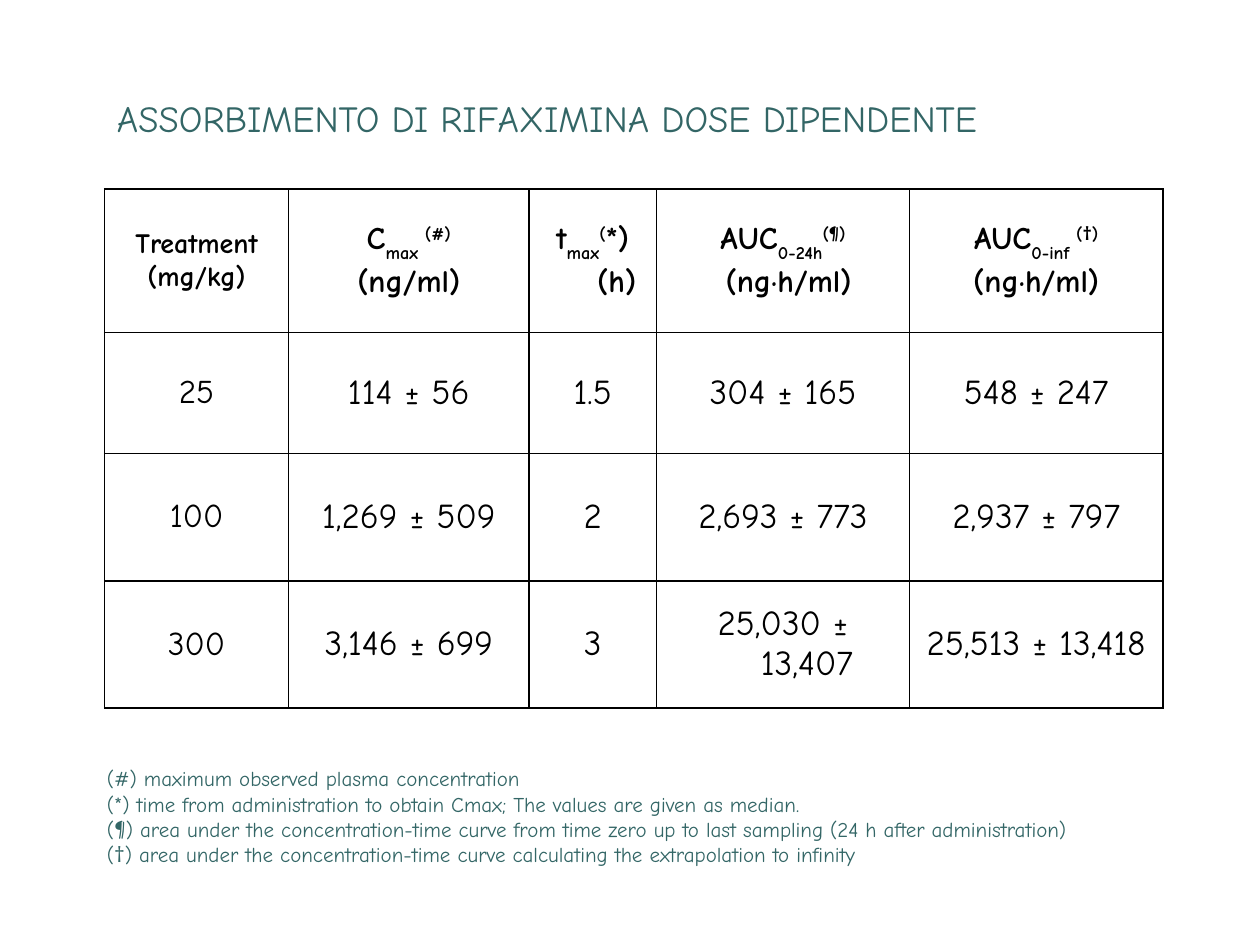
from dataclasses import dataclass

from lxml import etree
from pptx import Presentation
from pptx.dml.color import RGBColor
from pptx.enum.text import MSO_ANCHOR, PP_ALIGN
from pptx.oxml.ns import qn
from pptx.util import Inches, Pt

CENTER = PP_ALIGN.CENTER
MIDDLE = MSO_ANCHOR.MIDDLE
BOTTOM = MSO_ANCHOR.BOTTOM
TOP = MSO_ANCHOR.TOP
BLANK_LAYOUT = 6
SUBSCRIPT, SUPERSCRIPT = -30000, 30000


@dataclass(frozen=True)
class Theme:
    font: str = "Comic Neue"
    accent: RGBColor = RGBColor(0x33, 0x66, 0x66)
    ink: RGBColor = RGBColor(0, 0, 0)
    paper: RGBColor = RGBColor(255, 255, 255)
    title: int = 21
    treatment: int = 16
    header: int = 18
    dose: int = 19
    value: int = 20
    note: int = 12
    border: int = 1


THEME = Theme()
TITLE = "ASSORBIMENTO DI RIFAXIMINA DOSE DIPENDENTE"
COLUMN_WIDTHS = (1.46, 1.91, 1.01, 2.01, 2.01)
ROW_HEIGHTS = (1.14, 0.96, 1.01, 1.01)
HANGING_INDENT = 0.38
HEADERS = (
    (("Treatment",), ("(mg/kg)",)),
    (("C", ("max ", SUBSCRIPT), ("(#)", SUPERSCRIPT)), ("(ng/ml)",)),
    (("t", ("max", SUBSCRIPT), ("(", SUPERSCRIPT), "*) (h)"),),
    (("AUC", ("0-24h", SUBSCRIPT), ("(¶)", SUPERSCRIPT)), (" (ng·h/ml)",)),
    (("AUC", ("0-inf ", SUBSCRIPT), ("(†)", SUPERSCRIPT)), ("(ng·h/ml)",)),
)
RESULTS = (
    ("25", "114 ± 56", "1.5", "304 ± 165", "548 ± 247"),
    ("100", "1,269 ± 509", "2", "2,693 ± 773", "2,937 ± 797"),
    ("300", "3,146 ± 699", "3", "25,030 ± 13,407", "25,513 ± 13,418"),
)
NOTES = (
    "(#) maximum observed plasma concentration",
    "(*) time from administration to obtain Cmax; The values are given as median.",
    "(¶) area under the concentration-time curve from time zero up to last sampling (24 h after administration)",
    "(†) area under the concentration-time curve calculating the extrapolation to infinity",
)


def add_span(para, content, size, color, bold=False):
    text, baseline = (content, 0) if isinstance(content, str) else content
    span = para.add_run()
    span.text = text
    span.font.name = THEME.font
    span.font.size = Pt(size)
    span.font.bold = bold
    span.font.color.rgb = color
    if baseline:
        span.font._element.set("baseline", str(baseline))


def add_paragraphs(frame, lines, size, color, bold=False):
    for index, line in enumerate(lines):
        para = frame.add_paragraph() if index else frame.paragraphs[0]
        for content in line:
            add_span(para, content, size, color, bold)


def add_text(page, left, top, width, height, lines, size, anchor):
    box = page.shapes.add_textbox(
        Inches(left), Inches(top), Inches(width), Inches(height)
    )
    frame = box.text_frame
    frame.word_wrap = True
    frame.vertical_anchor = anchor
    add_paragraphs(frame, [(line,) for line in lines], size, THEME.accent)


def add_borders(cell):
    properties = cell._tc.get_or_add_tcPr()
    for side in ("lnL", "lnR", "lnT", "lnB"):
        line = etree.SubElement(
            properties, qn(f"a:{side}"), w=str(Pt(THEME.border))
        )
        fill = etree.SubElement(line, qn("a:solidFill"))
        etree.SubElement(fill, qn("a:srgbClr"), val=str(THEME.ink))


def fill_cell(cell, lines, size, bold):
    add_borders(cell)
    cell.fill.solid()
    cell.fill.fore_color.rgb = THEME.paper
    cell.vertical_anchor = MIDDLE
    add_paragraphs(cell.text_frame, lines, size, THEME.ink, bold)
    for para in cell.text_frame.paragraphs:
        para.alignment = CENTER
        properties = para._p.get_or_add_pPr()
        properties.set("marL", str(Inches(HANGING_INDENT)))
        properties.set("indent", str(Inches(-HANGING_INDENT)))


def add_results_table(page):
    rows = [HEADERS] + [[((value,),) for value in row] for row in RESULTS]
    table = page.shapes.add_table(
        len(rows), len(COLUMN_WIDTHS), Inches(0.83), Inches(1.5),
        Inches(sum(COLUMN_WIDTHS)), Inches(sum(ROW_HEIGHTS)),
    ).table
    table.first_row = False
    table.horz_banding = False
    for column, width in zip(table.columns, COLUMN_WIDTHS):
        column.width = Inches(width)
    for row, height in zip(table.rows, ROW_HEIGHTS):
        row.height = Inches(height)
    for row_index, row in enumerate(rows):
        is_header = row_index == 0
        first_size, other_size = (
            (THEME.treatment, THEME.header) if is_header
            else (THEME.dose, THEME.value)
        )
        for column_index, lines in enumerate(row):
            size = other_size if column_index else first_size
            fill_cell(table.cell(row_index, column_index), lines, size, is_header)


def main():
    deck = Presentation()
    deck.slide_width = Inches(10)
    deck.slide_height = Inches(7.5)
    page = deck.slides.add_slide(deck.slide_layouts[BLANK_LAYOUT])
    add_text(page, 0.83, 0.58, 8.42, 0.58, [TITLE], THEME.title, BOTTOM)
    add_results_table(page)
    add_text(page, 0.75, 6.03, 9.25, 0.9, NOTES, THEME.note, TOP)
    deck.save("out.pptx")


if __name__ == "__main__":
    main()
